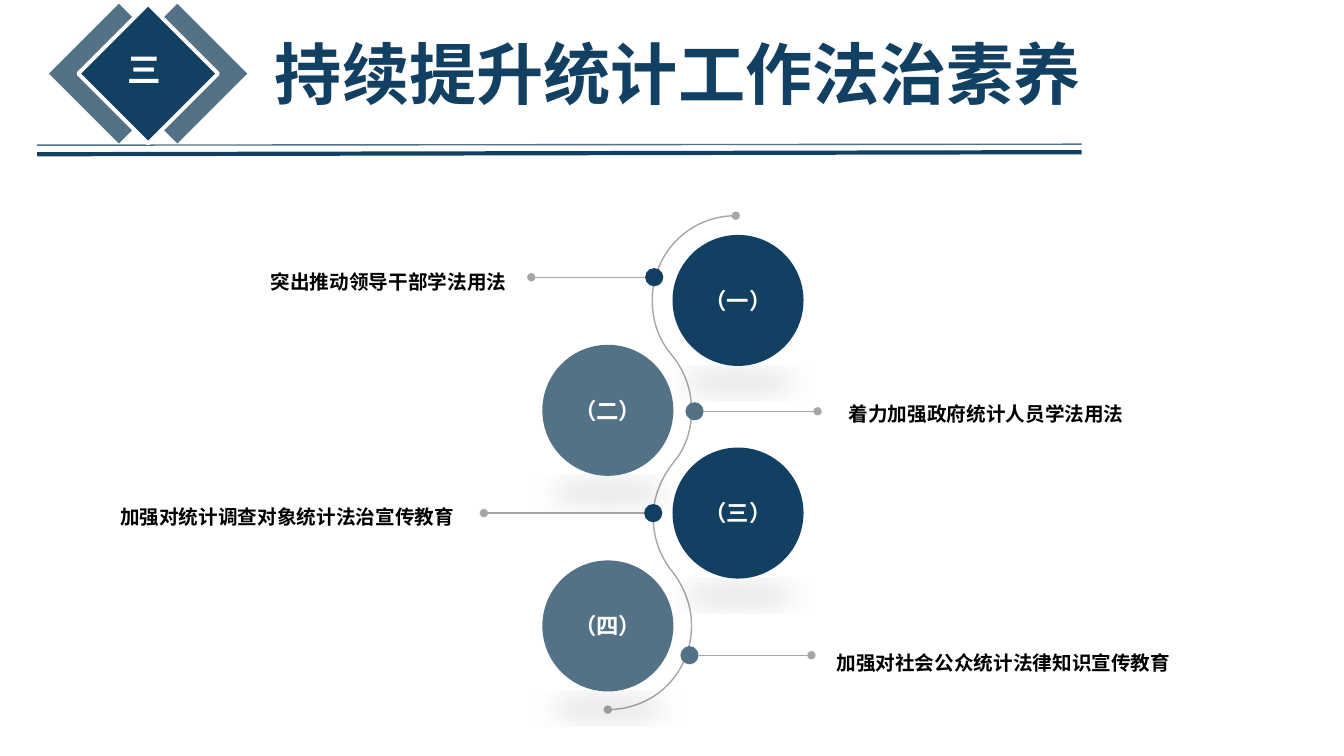
import pptx
import pptx.dml.color
import pptx.enum.shapes
import pptx.enum.text
import pptx.oxml
import pptx.oxml.ns
import pptx.util
from lxml import etree

Pt = pptx.util.Pt
qn = pptx.oxml.ns.qn
SHAPE = pptx.enum.shapes.MSO_SHAPE
ALIGN = pptx.enum.text.PP_ALIGN
ANCHOR = pptx.enum.text.MSO_ANCHOR

FONT = "Noto Sans CJK SC"
NAVY, SLATE, GREY, WHITE, BLACK = "124062", "537285", "A6A6A6", "FFFFFF", "000000"

TITLE = "持续提升统计工作法治素养"
CIRCLE, DOT = 93.6, 13

# Number, label, circle (left, top), dot (left, middle), far end of the
# leader, label (left, top); all relative to the timeline box.
STEPS = [
    ("（一）", "突出推动领导干部学法用法", (93, 13.7), (73.4, 43.9), -7.9, (-203, 30.2)),
    ("（二）", "着力加强政府统计人员学法用法", (0, 92.2), (102.2, 139.7), 196.6, (211.7, 124.6)),
    ("（三）", "加强对统计调查对象统计法治宣传教育", (93, 165.6), (72.7, 212.4), -41.8, (-310.3, 198)),
    ("（四）", "加强对社会公众统计法律知识宣传教育", (0, 246.2), (98.6, 313.9), 192.2, (203, 302.4)),
]

# Start point, then three Bezier points for each bend, from bottom to top.
WAVE = [
    (46.8, 352.8),
    (79.9, 352.8), (106.6, 326.2), (106.6, 292.3),
    (106.6, 277.9), (100.8, 264.2), (92.2, 253.4),
    (84.2, 243.4), (79.2, 229.7), (79.2, 215.3),
    (79.2, 200.9), (85, 187.2), (93.6, 176.4),
    (102.2, 166.3), (106.6, 153.4), (106.6, 139),
    (106.6, 123.8), (101.5, 110.9), (92.9, 100.1),
    (83.5, 89.3), (78.5, 75.6), (78.5, 60.5),
    (78.5, 27.4), (105.1, 0), (138.2, 0),
]


def color(hex_string):
    return pptx.dml.color.RGBColor.from_string(hex_string)


def add_text(shape, text, size, hex_color, align=ALIGN.LEFT):
    paragraph = shape.text_frame.paragraphs[0]
    paragraph.alignment = align
    run = paragraph.add_run()
    run.text = text
    run.font.size = Pt(size)
    run.font.bold = True
    run.font.color.rgb = color(hex_color)
    run.font.name = FONT
    etree.SubElement(run.font._element, qn("a:ea")).set("typeface", FONT)
    return paragraph


def add_label(slide, left, top, width, height, text, size, hex_color, align=ALIGN.LEFT):
    label = slide.shapes.add_textbox(Pt(left), Pt(top), Pt(width), Pt(height))
    label.text_frame.word_wrap = False
    label.text_frame.auto_size = pptx.enum.text.MSO_AUTO_SIZE.SHAPE_TO_FIT_TEXT
    add_text(label, text, size, hex_color, align)
    return label


def add_filled(slide, kind, left, top, size, fill):
    shape = slide.shapes.add_shape(kind, Pt(left), Pt(top), Pt(size), Pt(size))
    shape.shadow.inherit = False
    shape.fill.solid()
    shape.fill.fore_color.rgb = color(fill)
    shape.line.fill.background()
    return shape


def set_line(shape, hex_color, width, oval_ends=()):
    shape.line.color.rgb = color(hex_color)
    shape.line.width = Pt(width)
    outline = shape._element.spPr.find(qn("a:ln"))
    for end in oval_ends:
        etree.SubElement(outline, qn(end)).set("type", "oval")


def add_rule(slide, start, end, hex_color, width, oval_ends=()):
    rule = slide.shapes.add_connector(
        pptx.enum.shapes.MSO_CONNECTOR.STRAIGHT, *(Pt(v) for v in (*start, *end)))
    set_line(rule, hex_color, width, oval_ends)
    etree.SubElement(rule._element.spPr, qn("a:effectLst"))


def add_floor_shadow(shape):
    """Cast a soft, flattened shadow below the shape."""
    effects = shape._element.spPr.find(qn("a:effectLst"))
    shadow = etree.SubElement(effects, qn("a:outerShdw"), {
        "blurRad": str(Pt(19)), "dist": str(Pt(3)), "dir": "5400000",
        "sx": "90000", "sy": "-19000", "rotWithShape": "0"})
    tint = etree.SubElement(shadow, qn("a:srgbClr"), val=BLACK)
    etree.SubElement(tint, qn("a:alpha"), val="10000")


def add_wave(slide, left, top):
    points = [(Pt(left + x), Pt(top + y)) for x, y in WAVE]
    builder = slide.shapes.build_freeform(*points[0])
    builder.add_line_segments(points[1:], close=False)
    wave = builder.convert_to_shape()
    wave.shadow.inherit = False
    wave.fill.background()
    set_line(wave, GREY, 1, ("a:headEnd", "a:tailEnd"))
    segments = list(wave._element.spPr.iter(qn("a:lnTo")))
    for i in range(0, len(segments), 3):
        bend = etree.Element(qn("a:cubicBezTo"))
        segments[i].addprevious(bend)
        for segment in segments[i:i + 3]:
            bend.append(segment[0])
            segment.getparent().remove(segment)


def add_header(slide, left, top, width):
    diamond, offset = 70.6, 20.9
    right = left + width
    add_rule(slide, (right, top + 103), (left, top + 103.7), SLATE, 1)
    for step, fill in ((2, SLATE), (0, SLATE), (1, NAVY)):
        badge = add_filled(slide, SHAPE.ROUNDED_RECTANGLE,
                           left + 23 + step * offset, top + 17.3, diamond, fill)
        badge.adjustments[0] = 0
        badge.rotation = 45
    set_line(badge, WHITE, 2.75)
    add_rule(slide, (right, top + 108.7), (left, top + 110.2), NAVY, 3)
    add_label(slide, left + 162.7, top + 19.4, 596.2, 65.5, TITLE, 48, NAVY)
    add_label(slide, left + 57.6, top + 31.7, 38.9, 36, "三", 24, WHITE)


def add_step(slide, left, top, fill, step):
    number, text, circle_at, dot_at, leader_end, label_at = step
    dot_left, middle = left + dot_at[0], top + dot_at[1]
    to_left = leader_end < dot_at[0]
    add_filled(slide, SHAPE.OVAL, dot_left, middle - DOT / 2, DOT, fill)
    leader_start = dot_left if to_left else dot_left + DOT
    add_rule(slide, (leader_start, middle), (left + leader_end, middle),
             GREY, 1, ("a:tailEnd",))

    label = add_label(slide, left + label_at[0], top + label_at[1],
                      14 * len(text) + 16.5, 22.3, text, 14, BLACK,
                      ALIGN.RIGHT if to_left else ALIGN.LEFT)
    label.text_frame.margin_top = label.text_frame.margin_bottom = 0
    label.text_frame.paragraphs[0].line_spacing = 1.5

    circle = add_filled(slide, SHAPE.OVAL, left + circle_at[0], top + circle_at[1], CIRCLE, fill)
    add_floor_shadow(circle)
    circle.text_frame.vertical_anchor = ANCHOR.MIDDLE
    add_text(circle, number, 16, WHITE, ALIGN.CENTER)


def add_timeline(slide, left, top):
    add_wave(slide, left, top)
    for i, step in enumerate(STEPS):
        add_step(slide, left, top, (NAVY, SLATE)[i % 2], step)


def main():
    deck = pptx.Presentation()
    deck.slide_width, deck.slide_height = Pt(960), Pt(540)
    slide = deck.slides.add_slide(deck.slide_layouts[6])
    add_header(slide, 26.6, 0, 746)
    add_timeline(slide, 387.4, 154.1)
    deck.save("out.pptx")


if __name__ == "__main__":
    main()
